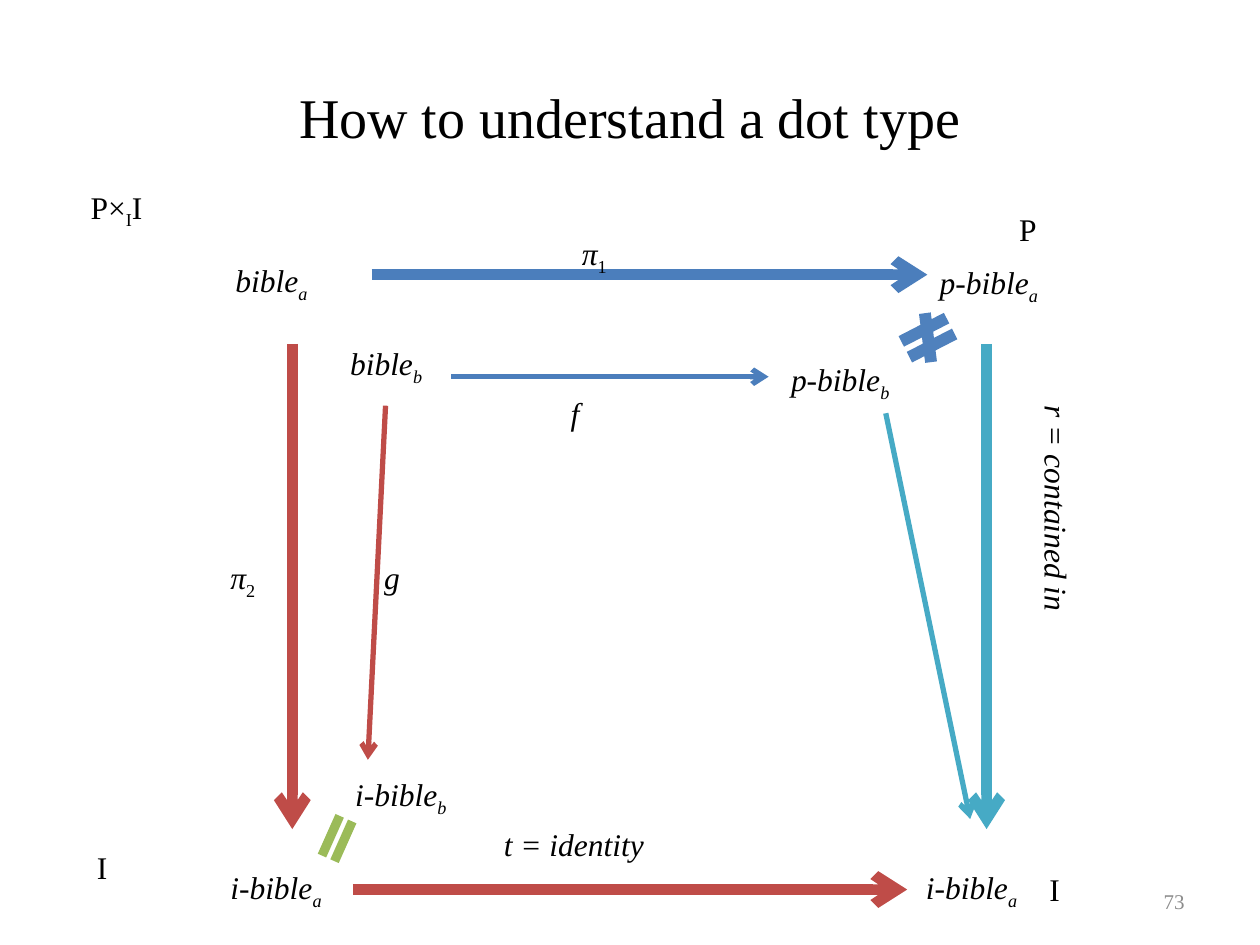
from pptx import Presentation
from pptx.dml.color import RGBColor
from pptx.enum.shapes import MSO_CONNECTOR, MSO_SHAPE
from pptx.enum.text import MSO_ANCHOR, MSO_AUTO_SIZE, PP_ALIGN
from pptx.oxml.ns import qn
from pptx.util import Inches, Pt
from lxml.etree import SubElement

BLACK = RGBColor(0x00, 0x00, 0x00)
GRAY = RGBColor(0x8C, 0x8C, 0x8C)
BLUE = RGBColor(0x4B, 0x7E, 0xBC)
RED = RGBColor(0xBF, 0x4C, 0x48)
TEAL = RGBColor(0x46, 0xAA, 0xC5)
GREEN = RGBColor(0x9B, 0xBB, 0x59)
SIGN_BLUE = RGBColor(0x4F, 0x81, 0xBD)


class Diagram:
    """Draw a commutative diagram on a grid of 100 columns by 75 rows."""

    font = "Times New Roman"
    columns, rows = 100, 75

    def __init__(self, prs):
        self.col = prs.slide_width / self.columns
        self.row = prs.slide_height / self.rows
        self.slide = prs.slides.add_slide(prs.slide_layouts[5])
        self.shapes = self.slide.shapes

    def grid(self, *values):
        units = (self.col, self.row) * 2
        return [round(v * unit) for v, unit in zip(values, units)]

    def style(self, r, size, color=BLACK, italic=False):
        r.font.name, r.font.size, r.font.italic = self.font, Pt(size), italic
        r.font.color.rgb = color

    def title(self, text, *box):
        sp = self.shapes.title
        sp.left, sp.top, sp.width, sp.height = self.grid(*box)
        tf = sp.text_frame
        tf.text = text
        tf.vertical_anchor = MSO_ANCHOR.MIDDLE
        tf.paragraphs[0].alignment = PP_ALIGN.CENTER
        self.style(tf.paragraphs[0].runs[0], 32)

    def label(self, text, x, y, w, h=4, italic=True, vertical=False):
        tf = self.shapes.add_textbox(*self.grid(x, y, w, h)).text_frame
        tf.word_wrap = True
        tf.auto_size = MSO_AUTO_SIZE.SHAPE_TO_FIT_TEXT
        if vertical:
            tf._txBody.bodyPr.set("vert", "eaVert")
        for i, part in enumerate(text.split("_")):
            r = tf.paragraphs[0].add_run()
            r.text = part
            self.style(r, 18, italic=italic and not part.isdigit())
            if i % 2:
                r._r.get_or_add_rPr().set("baseline", "-25000")

    def number(self, text, *box):
        tf = self.shapes.add_textbox(*self.grid(*box)).text_frame
        tf.word_wrap = True
        tf.text = text
        tf.vertical_anchor = MSO_ANCHOR.MIDDLE
        tf.paragraphs[0].alignment = PP_ALIGN.RIGHT
        self.style(tf.paragraphs[0].runs[0], 12, GRAY)

    def arrow(self, color, width, *ends):
        cxn = self.shapes.add_connector(MSO_CONNECTOR.STRAIGHT, *self.grid(*ends))
        cxn.line.color.rgb = color
        cxn.line.width = Pt(width)
        SubElement(cxn.line._get_or_add_ln(), qn("a:tailEnd"), type="arrow")
        SubElement(cxn._element.spPr, qn("a:effectLst"))

    def sign(self, kind, color, rotation, *box):
        sp = self.shapes.add_shape(kind, *self.grid(*box))
        sp.shadow.inherit = False
        sp.fill.solid()
        sp.fill.fore_color.rgb = color
        sp.line.fill.background()
        sp.rotation = rotation


def main():
    prs = Presentation()
    prs.slide_width, prs.slide_height = Inches(10), Inches(7.5)
    d = Diagram(prs)
    d.title("How to understand a dot type", 5, 3, 90, 12.5)
    d.number("73", 71.7, 69.5, 23.3, 4)

    for color, width, *ends in (
        (BLUE, 6, 29.5, 21.8, 73.6, 21.8),
        (RED, 6, 23.2, 27.3, 23.2, 65.8),
        (RED, 6, 28, 70.6, 72, 70.6),
        (TEAL, 6, 78.3, 27.3, 78.3, 65.8),
        (RED, 3, 30.6, 32.2, 29.2, 60.3),
        (BLUE, 3, 35.8, 29.9, 61, 29.9),
        (TEAL, 3, 70.3, 32.8, 77, 65),
    ):
        d.arrow(color, width, *ends)

    for text, x, y in (("P×_I_I", 6.2, 14.4), ("P", 79.9, 16.2),
                       ("I", 82.3, 68.6), ("I", 6.7, 66.8)):
        d.label(text, x, y, 10.2, italic=False)

    for text, x, y, w in (
        ("bible_a", 17.7, 20.2, 13.4),
        ("i-bible_a", 17.3, 68.4, 13.4),
        ("i-bible_a", 72.5, 68.4, 13.4),
        ("p-bible_a", 73.6, 20.4, 13.4),
        ("bible_b", 26.8, 26.8, 9.8),
        ("i-bible_b", 27.2, 61, 9.8),
        ("p-bible_b", 61.8, 28.1, 10.7),
        ("t = identity", 39, 65, 19.7),
        ("π_2", 17.3, 43.8, 7.1),
        ("π_1", 45.2, 18.1, 7.1),
        ("g", 29.5, 43.8, 7.1),
        ("f", 44.3, 30.8, 7.1),
    ):
        d.label(text, x, y, w)
    d.label("r = contained in", 80.9, 31.2, 5, 20.5, vertical=True)

    d.sign(MSO_SHAPE.MATH_EQUAL, GREEN, 114, 24.4, 65, 4.7, 3.1)
    d.sign(MSO_SHAPE.MATH_NOT_EQUAL, SIGN_BLUE, 332.8, 70.9, 24.8, 5.5, 4)
    prs.save("out.pptx")


if __name__ == "__main__":
    main()
